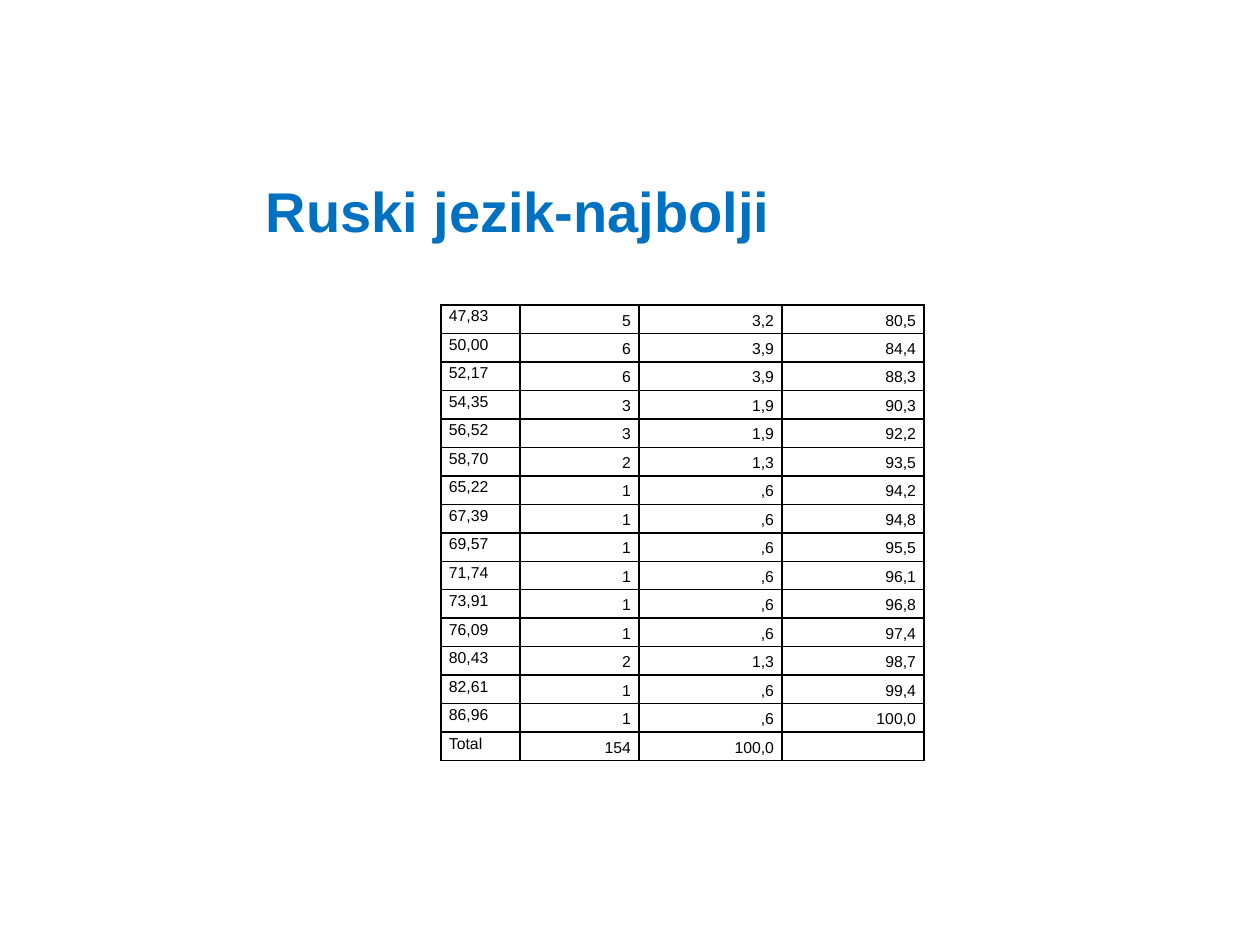
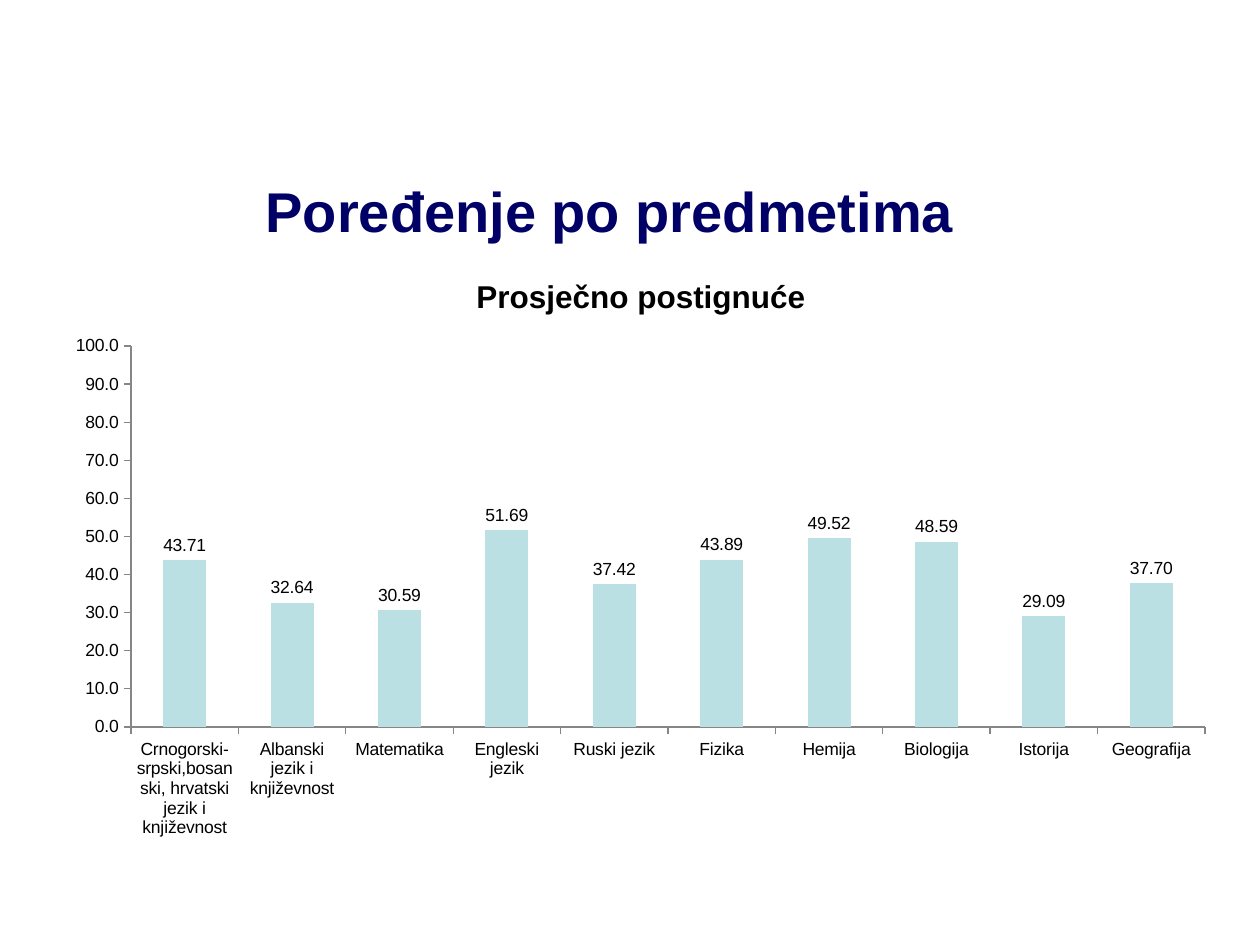
import pptx
import pptx.chart.data
import pptx.dml.color
import pptx.enum.chart
import pptx.enum.text
import pptx.oxml
import pptx.oxml.ns
import pptx.util
from lxml import etree

PX = 914400 / 126
FONT = "Arial"
BLACK, WHITE, AXIS_GREY = "000000", "FFFFFF", "868686"
TITLE_BLUE, TITLE_NAVY, COLUMN_TEAL = "0070C0", "000066", "BBE0E3"
TITLE_BOX = (253, 155, 944, 110)

RESULTS_BOX = (441, 305, 483, 456)
RESULTS_COLUMNS = (79, 119, 143, 142)
RESULTS = [
    ("47,83", "5", "3,2", "80,5"),
    ("50,00", "6", "3,9", "84,4"),
    ("52,17", "6", "3,9", "88,3"),
    ("54,35", "3", "1,9", "90,3"),
    ("56,52", "3", "1,9", "92,2"),
    ("58,70", "2", "1,3", "93,5"),
    ("65,22", "1", ",6", "94,2"),
    ("67,39", "1", ",6", "94,8"),
    ("69,57", "1", ",6", "95,5"),
    ("71,74", "1", ",6", "96,1"),
    ("73,91", "1", ",6", "96,8"),
    ("76,09", "1", ",6", "97,4"),
    ("80,43", "2", "1,3", "98,7"),
    ("82,61", "1", ",6", "99,4"),
    ("86,96", "1", ",6", "100,0"),
    ("Total", "154", "100,0", ""),
]

AVERAGES_TITLE = "Prosječno postignuće"
AVERAGES_BOX = (53, 252, 1176, 598)
AVERAGES_PLOT = (131, 346, 1074, 381)
AVERAGES = {
    "Crnogorski-srpski,bosanski, hrvatski jezik i književnost": 43.71,
    "Albanski jezik i književnost": 32.64,
    "Matematika": 30.59,
    "Engleski jezik": 51.69,
    "Ruski jezik": 37.42,
    "Fizika": 43.89,
    "Hemija": 49.52,
    "Biologija": 48.59,
    "Istorija": 29.09,
    "Geografija": 37.7,
}


def emu(px):
    return pptx.util.Emu(round(px * PX))


def rgb(value):
    return pptx.dml.color.RGBColor.from_string(value)


def format_font(font, size, color=BLACK, bold=False):
    font.name = FONT
    font.size = pptx.util.Pt(size)
    font.bold = bold
    font.color.rgb = rgb(color)


def write_text(frame, text, size, color=BLACK, bold=False, align="LEFT", spacing=1.0):
    paragraph = frame.paragraphs[0]
    paragraph.alignment = getattr(pptx.enum.text.PP_ALIGN, align)
    paragraph.line_spacing = spacing
    if text:
        run = paragraph.add_run()
        run.text = text
        format_font(run.font, size, color, bold)
    else:
        # An empty paragraph takes its height from its end mark.
        end_mark = etree.SubElement(paragraph._p, pptx.oxml.ns.qn("a:endParaRPr"))
        end_mark.set("sz", str(size * 100))


def add_titled_slide(deck, text, color):
    slide = deck.slides.add_slide(deck.slide_layouts[5])
    title = slide.shapes.title
    title.left, title.top, title.width, title.height = map(emu, TITLE_BOX)
    title.text_frame.word_wrap = True
    title.text_frame.vertical_anchor = pptx.enum.text.MSO_ANCHOR.MIDDLE
    write_text(title.text_frame, text, 32, color=color, bold=True)
    return slide


def add_borders(cell, color=BLACK, width=1):
    properties = cell._tc.get_or_add_tcPr()
    for position, side in enumerate(("lnL", "lnR", "lnT", "lnB")):
        border = pptx.oxml.parse_xml(
            f'<a:{side} {pptx.oxml.ns.nsdecls("a")} w="{pptx.util.Pt(width)}">'
            f'<a:solidFill><a:srgbClr val="{color}"/></a:solidFill></a:{side}>'
        )
        properties.insert(position, border)


def add_results_table(slide):
    table = slide.shapes.add_table(
        len(RESULTS), len(RESULTS_COLUMNS), *map(emu, RESULTS_BOX)
    ).table
    table.first_row = table.horz_banding = False
    for column, width in zip(table.columns, RESULTS_COLUMNS):
        column.width = emu(width)
    for row, values in zip(table.rows, RESULTS):
        row.height = emu(RESULTS_BOX[3] / len(RESULTS))
        for index, (cell, value) in enumerate(zip(row.cells, values)):
            cell.fill.solid()
            cell.fill.fore_color.rgb = rgb(WHITE)
            cell.margin_left = cell.margin_right = emu(8)
            cell.margin_top = cell.margin_bottom = 0
            anchor = "MIDDLE" if index else "TOP"
            cell.vertical_anchor = getattr(pptx.enum.text.MSO_ANCHOR, anchor)
            align = "RIGHT" if index else "LEFT"
            write_text(cell.text_frame, value, 9, align=align, spacing=1.15)
            add_borders(cell)


def place_plot(chart, chart_box, plot_box):
    """Fix the inner plot area as fractions of the chart box."""
    left, top, width, height = chart_box
    fractions = {
        "x": (plot_box[0] - left) / width,
        "y": (plot_box[1] - top) / height,
        "w": plot_box[2] / width,
        "h": plot_box[3] / height,
    }
    modes = '<c:xMode val="edge"/><c:yMode val="edge"/>'
    sizes = "".join(f'<c:{key} val="{value:.4f}"/>' for key, value in fractions.items())
    layout = pptx.oxml.parse_xml(
        f'<c:layout {pptx.oxml.ns.nsdecls("c")}><c:manualLayout>'
        f'<c:layoutTarget val="inner"/>{modes}{sizes}</c:manualLayout></c:layout>'
    )
    plot_area = chart._chartSpace.chart.plotArea
    for automatic in plot_area.findall(pptx.oxml.ns.qn("c:layout")):
        plot_area.remove(automatic)
    plot_area.insert(0, layout)


def format_axis(axis):
    axis.has_major_gridlines = False
    axis.major_tick_mark = pptx.enum.chart.XL_TICK_MARK.OUTSIDE
    axis.minor_tick_mark = pptx.enum.chart.XL_TICK_MARK.NONE
    axis.format.line.color.rgb = rgb(AXIS_GREY)
    axis.format.line.width = pptx.util.Pt(0.75)
    format_font(axis.tick_labels.font, 10)


def add_averages_chart(slide):
    averages = pptx.chart.data.CategoryChartData()
    averages.categories = list(AVERAGES)
    averages.add_series(AVERAGES_TITLE, list(AVERAGES.values()))
    chart = slide.shapes.add_chart(
        pptx.enum.chart.XL_CHART_TYPE.COLUMN_CLUSTERED,
        *map(emu, AVERAGES_BOX),
        averages,
    ).chart
    format_font(chart.font, 10)
    chart.has_legend = False
    chart.has_title = True
    write_text(chart.chart_title.text_frame, AVERAGES_TITLE, 18, bold=True, align="CENTER")
    chart.chart_title.include_in_layout = False

    format_axis(chart.category_axis)
    format_axis(chart.value_axis)
    chart.value_axis.minimum_scale = 0
    chart.value_axis.maximum_scale = 100
    chart.value_axis.major_unit = 10
    chart.value_axis.tick_labels.number_format = "0.0"
    chart.value_axis.tick_labels.number_format_is_linked = False

    columns = chart.plots[0]
    columns.vary_by_categories = False
    columns.gap_width = 150
    fill = columns.series[0].format.fill
    fill.solid()
    fill.fore_color.rgb = rgb(COLUMN_TEAL)
    labels = columns.series[0].data_labels
    labels.show_value = True
    labels.number_format = "0.00"
    labels.number_format_is_linked = False
    labels.position = pptx.enum.chart.XL_LABEL_POSITION.OUTSIDE_END
    format_font(labels.font, 10)
    place_plot(chart, AVERAGES_BOX, AVERAGES_PLOT)


def main():
    deck = pptx.Presentation()
    deck.slide_width, deck.slide_height = emu(1260), emu(945)
    add_results_table(add_titled_slide(deck, "Ruski jezik-najbolji", TITLE_BLUE))
    add_averages_chart(add_titled_slide(deck, "Poređenje po predmetima", TITLE_NAVY))
    deck.save("out.pptx")


if __name__ == "__main__":
    main()
